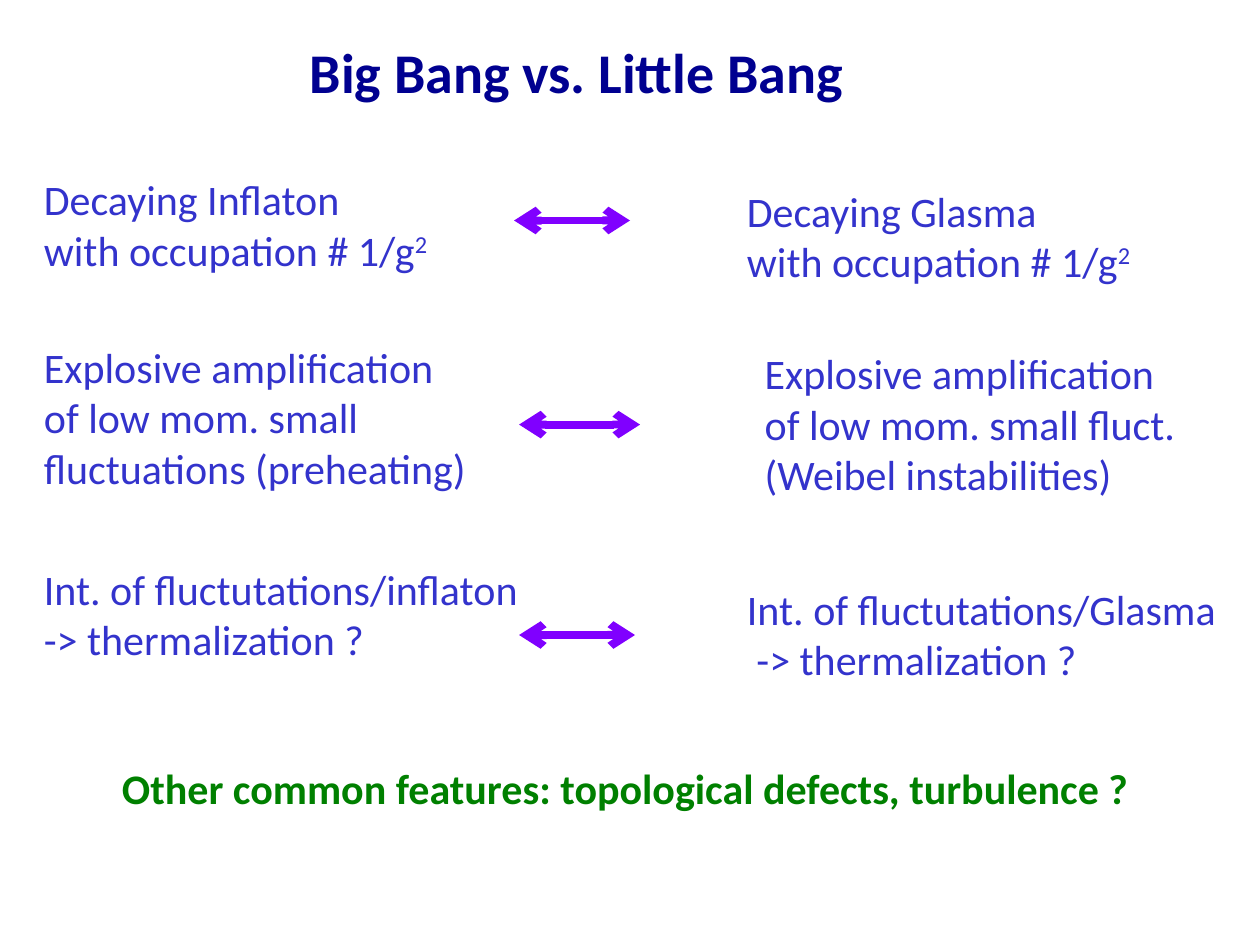
from dataclasses import dataclass

from lxml.etree import SubElement
from pptx import Presentation
from pptx.dml.color import RGBColor
from pptx.enum.shapes import MSO_CONNECTOR
from pptx.enum.text import MSO_AUTO_SIZE
from pptx.oxml.ns import qn
from pptx.slide import Slide
from pptx.util import Inches, Pt

NAVY = RGBColor(0x00, 0x00, 0x90)
BLUE = RGBColor(0x33, 0x33, 0xCC)
VIOLET = RGBColor(0x80, 0x00, 0xFF)
GREEN = RGBColor(0x00, 0x80, 0x00)

COLUMNS, ROWS = 40, 30
LEFT_COLUMN, RIGHT_COLUMN = 1, 23.32
OCCUPATION = "with occupation # 1/g^2"

# Each comparison: left box, arrow (start column, end column, row), right box.
# A box is (column, row, width, height, wrap, lines).
COMPARISONS = [
    ((LEFT_COLUMN, 5.32, 13.2, 3.64, True, ["Decaying Inflaton", OCCUPATION]),
     (16.32, 20, 7),
     (RIGHT_COLUMN, 5.68, 14.52, 5, True, ["Decaying Glasma", OCCUPATION])),
    ((LEFT_COLUMN, 10.64, 14.36, 5.24, False,
      ["Explosive amplification", "of low mom. small", "fluctuations (preheating)"]),
     (16.48, 20.32, 13.48),
     (23.88, 10.84, 13.96, 5.24, False,
      ["Explosive amplification", "of low mom. small fluct.", "(Weibel instabilities)"])),
    ((LEFT_COLUMN, 17.68, 16, 3.64, False,
      ["Int. of fluctutations/inflaton", "-> thermalization ?"]),
     (16.48, 20.16, 20.16),
     (RIGHT_COLUMN, 18.32, 15.84, 3.64, False,
      ["Int. of fluctutations/Glasma", " -> thermalization ?"])),
]


@dataclass
class Page:
    slide: Slide
    cell_width: int
    cell_height: int
    font: str = "Calibri"

    def text(self, column, row, width, height, wrap, lines,
             color=BLUE, size=24, bold=False):
        """Add one paragraph per line; a part after ^ is set as superscript."""
        box = self.slide.shapes.add_textbox(
            round(column * self.cell_width), round(row * self.cell_height),
            round(width * self.cell_width), round(height * self.cell_height))
        frame = box.text_frame
        frame.word_wrap = wrap
        frame.auto_size = MSO_AUTO_SIZE.SHAPE_TO_FIT_TEXT
        for index, line in enumerate(lines):
            para = frame.add_paragraph() if index else frame.paragraphs[0]
            base, _, superscript = line.partition("^")
            para.add_run().text = base
            if superscript:
                span = para.add_run()
                span.text = superscript
                span._r.get_or_add_rPr().set("baseline", "30000")
            para.font.name = self.font
            para.font.size = Pt(size)
            para.font.bold = bold
            para.font.color.rgb = color

    def double_arrow(self, start, end, row):
        y = round(row * self.cell_height)
        arrow = self.slide.shapes.add_connector(
            MSO_CONNECTOR.STRAIGHT,
            round(start * self.cell_width), y, round(end * self.cell_width), y)
        arrow.line.color.rgb = VIOLET
        arrow.line.width = Pt(4.5)
        outline = arrow.line._get_or_add_ln()
        for tip in ("a:headEnd", "a:tailEnd"):
            SubElement(outline, qn(tip), type="arrow")
        SubElement(arrow._element.spPr, qn("a:effectLst"))


def main():
    deck = Presentation()
    deck.slide_width, deck.slide_height = Inches(10), Inches(7.5)
    page = Page(deck.slides.add_slide(deck.slide_layouts[6]),
                deck.slide_width // COLUMNS, deck.slide_height // ROWS)

    page.text(9.44, 1, 17.92, 2.56, False, ["Big Bang vs. Little Bang"],
              color=NAVY, size=32, bold=True)
    for inflaton, arrow, glasma in COMPARISONS:
        page.text(*inflaton)
        page.double_arrow(*arrow)
        page.text(*glasma)
    page.text(3.48, 24, 33.08, 2, False,
              ["Other common features: topological defects, turbulence ?"],
              color=GREEN, bold=True)
    deck.save("out.pptx")


if __name__ == "__main__":
    main()
